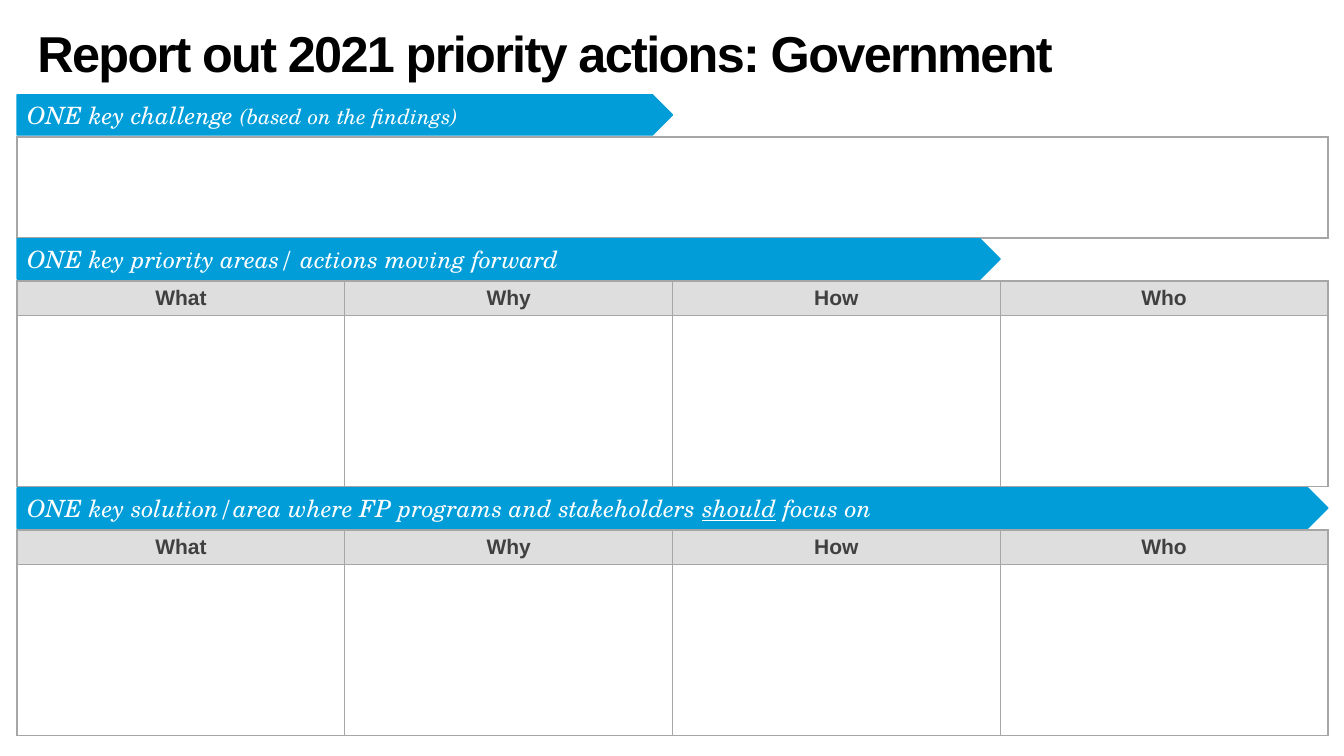
from dataclasses import dataclass

from lxml import etree
from pptx import Presentation
from pptx.dml.color import RGBColor
from pptx.enum import shapes, text
from pptx.oxml import ns
from pptx.util import Inches, Pt


@dataclass(frozen=True)
class Theme:
    blue: str = "009DD9"
    rule: str = "A6A6A6"
    header_fill: str = "DEDEDE"
    header_ink: str = "404040"
    black: str = "000000"
    white: str = "FFFFFF"
    sans: str = "Arial"
    serif: str = "TeX Gyre Schola"
    title_size: float = 36
    banner_size: float = 17
    small_size: float = 15
    thick: float = 1.5
    thin: float = 0.75


THEME = Theme()
LEFT, WIDTH = 0.17, 13
BANNER_HEIGHT = 0.4
HEADER_HEIGHT, ANSWER_HEIGHT = 0.34, 1.7
QUESTIONS = ["What", "Why", "How", "Who"]


def add_span(para, words, *, size, color, font, bold=False, italic=False,
             underline=False, spacing=0):
    span = para.add_run()
    span.text = words
    span.font.size = Pt(size)
    span.font.name = font
    span.font.color.rgb = RGBColor.from_string(color)
    span.font.bold, span.font.italic = bold, italic
    span.font.underline = underline
    if spacing:
        span.font._element.set("spc", str(round(spacing * 100)))


def add_title(page, words, box):
    title = page.shapes.title
    title.left, title.top, title.width, title.height = map(Inches, box)
    frame = title.text_frame
    frame.word_wrap = True
    frame.auto_size = text.MSO_AUTO_SIZE.NONE
    frame.vertical_anchor = text.MSO_ANCHOR.MIDDLE
    para = frame.paragraphs[0]
    para.alignment = text.PP_ALIGN.LEFT
    para.line_spacing = 0.9
    add_span(para, words, size=THEME.title_size, color=THEME.black,
             font=THEME.sans, bold=True, spacing=-1.2)


def add_banner(page, spans, box):
    """Draw an arrow-ended heading; spans are (words, format changes) pairs."""
    banner = page.shapes.add_shape(shapes.MSO_SHAPE.PENTAGON, *map(Inches, box))
    banner.shadow.inherit = False
    banner.fill.solid()
    banner.fill.fore_color.rgb = RGBColor.from_string(THEME.blue)
    banner.line.color.rgb = RGBColor.from_string(THEME.blue)
    banner.line.width = Pt(1)
    frame = banner.text_frame
    frame.word_wrap = True
    frame.vertical_anchor = text.MSO_ANCHOR.MIDDLE
    para = frame.paragraphs[0]
    para.alignment = text.PP_ALIGN.LEFT
    base = dict(size=THEME.banner_size, color=THEME.white, font=THEME.serif,
                italic=True)
    for words, changes in spans:
        add_span(para, words, **{**base, **changes})


def set_borders(cell, left, right, top, bottom):
    properties = cell._tc.get_or_add_tcPr()
    for side, width in zip("LRTB", (left, right, top, bottom)):
        line = etree.SubElement(properties, ns.qn(f"a:ln{side}"), w=str(Pt(width)))
        fill = etree.SubElement(line, ns.qn("a:solidFill"))
        etree.SubElement(fill, ns.qn("a:srgbClr"), val=THEME.rule)


def add_grid(page, box, row_heights, columns):
    """Add an unfilled table with equal columns and no built-in banding."""
    grid = page.shapes.add_table(len(row_heights), columns, *map(Inches, box)).table
    grid.first_row = grid.horz_banding = False
    for row, height in zip(grid.rows, row_heights):
        row.height = Inches(height)
    for column in grid.columns:
        column.width = Inches(box[2] / columns)
    return grid


def add_answer_box(page, box):
    cell = add_grid(page, box, [box[3]], 1).cell(0, 0)
    set_borders(cell, *[THEME.thick] * 4)
    cell.fill.background()


def add_question_table(page, box):
    grid = add_grid(page, box, [HEADER_HEIGHT, box[3] - HEADER_HEIGHT],
                    len(QUESTIONS))
    for column, question in enumerate(QUESTIONS):
        left = THEME.thick if column == 0 else THEME.thin
        right = THEME.thick if column == len(QUESTIONS) - 1 else THEME.thin
        header, answer = grid.cell(0, column), grid.cell(1, column)
        set_borders(header, left, right, THEME.thick, THEME.thick)
        set_borders(answer, left, right, THEME.thick, THEME.thin)
        answer.fill.background()
        header.fill.solid()
        header.fill.fore_color.rgb = RGBColor.from_string(THEME.header_fill)
        header.vertical_anchor = text.MSO_ANCHOR.MIDDLE
        header.margin_top = header.margin_bottom = Inches(0.03)
        para = header.text_frame.paragraphs[0]
        para.alignment = text.PP_ALIGN.CENTER
        add_span(para, question, size=THEME.small_size, color=THEME.header_ink,
                 font=THEME.sans, bold=True)


def add_report_page(deck):
    page = deck.slides.add_slide(deck.slide_layouts[5])
    add_title(page, "Report out 2021 priority actions: Government",
              (0.27, 0.23, 12.8, 0.65))
    table_height = HEADER_HEIGHT + ANSWER_HEIGHT
    sections = [
        (0.94, WIDTH / 2, add_answer_box, 1,
         [("ONE key challenge ", {}),
          ("(based on the findings)", {"size": THEME.small_size})]),
        (2.37, WIDTH * 3 / 4, add_question_table, table_height,
         [("ONE key priority areas/ actions moving forward", {})]),
        (4.84, WIDTH, add_question_table, table_height,
         [("ONE key solution/area where FP programs and stakeholders ", {}),
          ("should", {"underline": True}),
          (" focus on", {})]),
    ]
    for top, banner_width, add_content, height, spans in sections:
        content_top = top + BANNER_HEIGHT + 0.02
        add_content(page, (LEFT, content_top, WIDTH, height))
        add_banner(page, spans, (LEFT, top, banner_width, BANNER_HEIGHT))


def main():
    deck = Presentation()
    deck.slide_width, deck.slide_height = Inches(13.33), Inches(7.5)
    add_report_page(deck)
    deck.save("out.pptx")


if __name__ == "__main__":
    main()
